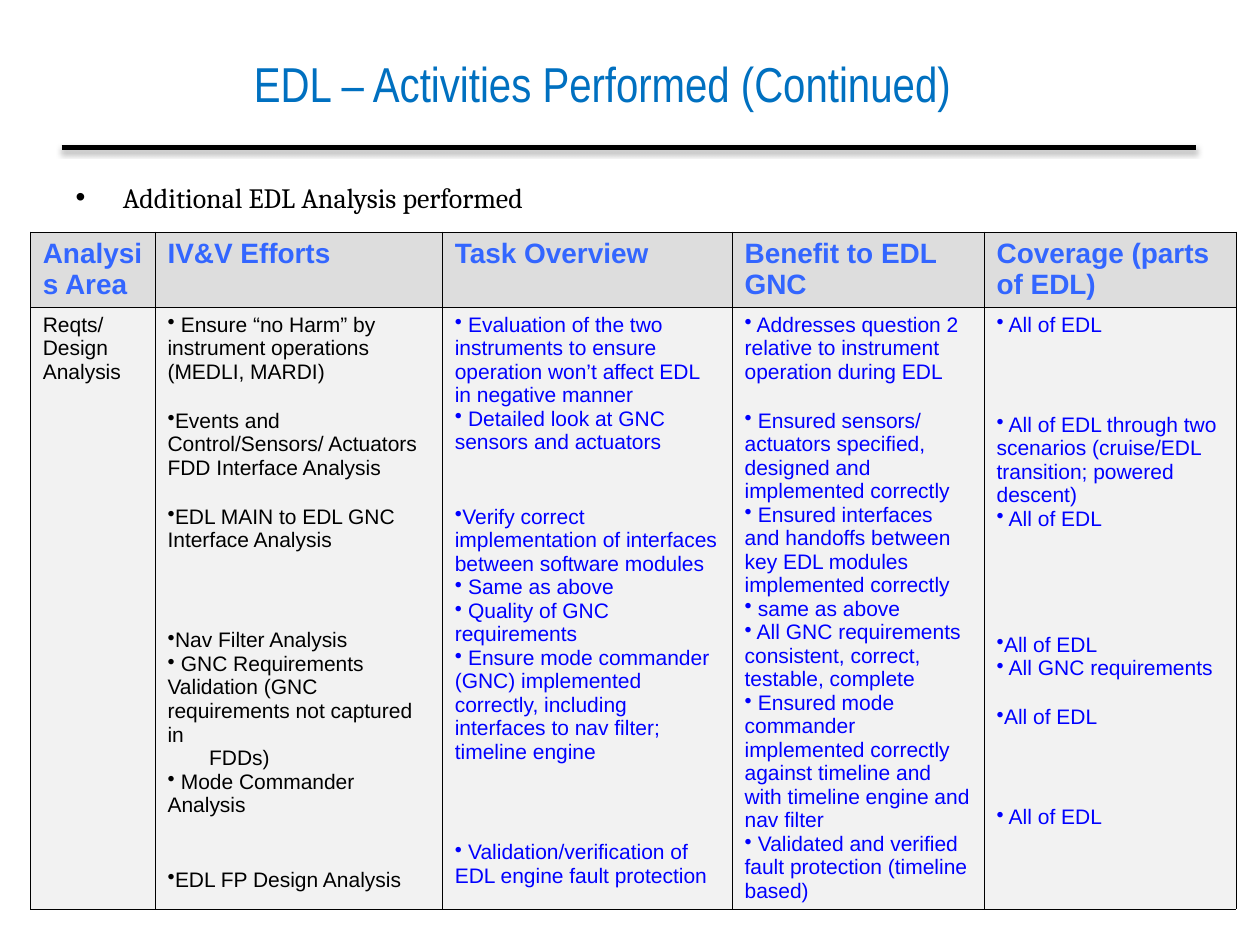
from dataclasses import dataclass
from lxml.etree import SubElement
from pptx import Presentation
from pptx.dml.color import RGBColor
from pptx.enum.shapes import MSO_CONNECTOR
from pptx.enum.text import MSO_ANCHOR, PP_ALIGN
from pptx.oxml import parse_xml
from pptx.oxml.ns import nsdecls, qn
from pptx.util import Inches, Pt


@dataclass(frozen=True)
class Theme:
    title: str = "0070C0"
    head: str = "3366FF"
    black: str = "000000"
    blue: str = "0000FF"
    shade: str = "DDDDDD"
    pale: str = "F2F2F2"
    big: int = 28
    mid: int = 16
    small: int = 12
    gap: float = 14.6


theme = Theme()


def write(text, para, size=theme.small, color=theme.black, face="Arial",
          bold=False, align=PP_ALIGN.LEFT, bullet=False, indent=0, gap=0):
    if bullet or indent:
        props = para._p.get_or_add_pPr()
        props.set("marL", str(Inches(indent)))
        props.set("indent", "0")
        if bullet:
            SubElement(props, qn("a:buChar")).set("char", "•")
    para.alignment = align
    para.space_before = Pt(gap)
    run = para.add_run()
    run.text = text
    run.font.size = Pt(size)
    run.font.name = face
    run.font.bold = bold
    run.font.color.rgb = RGBColor.from_string(color)


deck = Presentation()
deck.slide_width, deck.slide_height = Inches(10), Inches(7.5)
slide = deck.slides.add_slide(deck.slide_layouts[1])

title = slide.shapes.title
title.left, title.top = Inches(1.15), Inches(0.3)
title.width, title.height = Inches(7.26), Inches(0.72)
title.text_frame.vertical_anchor = MSO_ANCHOR.MIDDLE
write("EDL – Activities Performed (Continued)", title.text_frame.paragraphs[0],
      size=theme.big, color=theme.title, face="Arial Narrow", align=PP_ALIGN.CENTER)

body = slide.placeholders[1]
body.left, body.top = Inches(0.5), Inches(1.38)
body.width, body.height = Inches(9), Inches(5.32)
write("Additional EDL Analysis performed", body.text_frame.paragraphs[0],
      size=theme.mid, face="Cambria")

rule = slide.shapes.add_connector(
    MSO_CONNECTOR.STRAIGHT, Inches(0.49), Inches(1.17), Inches(9.49), Inches(1.17))
rule.line.width = Pt(3)
rule.line.color.rgb = RGBColor.from_string(theme.black)
rule._element.spPr.append(parse_xml(
    f'<a:effectLst {nsdecls("a")}><a:outerShdw blurRad="{Pt(3.1)}" dist="{Pt(1.8)}" '
    f'dir="5400000" rotWithShape="0"><a:srgbClr val="{theme.black}">'
    '<a:alpha val="35000"/></a:srgbClr></a:outerShdw></a:effectLst>'))

heads = ["Analysis Area", "IV&V Efforts", "Task Overview",
         "Benefit to EDL GNC", "Coverage (parts of EDL)"]
efforts = [
    (0, " Ensure “no Harm” by instrument operations (MEDLI, MARDI)"),
    (1, "Events and Control/Sensors/ Actuators FDD Interface Analysis"),
    (1, "EDL MAIN to EDL GNC Interface Analysis"),
    (3, "Nav Filter Analysis"),
    (0, " GNC Requirements Validation (GNC requirements not captured in"),
    (0, "FDDs)"),
    (0, " Mode Commander Analysis"),
    (2, "EDL FP Design Analysis"),
]
tasks = [
    (0, " Evaluation of the two instruments to ensure operation won’t affect EDL in negative manner"),
    (0, " Detailed look at GNC sensors and actuators"),
    (2, "Verify correct implementation of interfaces between software modules"),
    (0, " Same as above"),
    (0, " Quality of GNC requirements"),
    (0, " Ensure mode commander (GNC) implemented correctly, including interfaces to nav filter; timeline engine"),
    (3, " Validation/verification of EDL engine fault protection"),
]
gains = [
    (0, " Addresses question 2 relative to instrument operation during EDL"),
    (1, " Ensured sensors/ actuators specified, designed and implemented correctly"),
    (0, " Ensured interfaces and handoffs between key EDL modules implemented correctly"),
    (0, " same as above"),
    (0, " All GNC requirements consistent, correct, testable, complete"),
    (0, " Ensured mode commander implemented correctly against timeline and with timeline engine and nav filter"),
    (0, " Validated and verified fault protection (timeline based)"),
]
scope = [
    (0, " All of EDL"),
    (3, " All of EDL through two scenarios (cruise/EDL transition; powered descent)"),
    (0, " All of EDL"),
    (4, "All of EDL"),
    (0, " All GNC requirements"),
    (1, "All of EDL"),
    (3, " All of EDL"),
]
lists = [[(0, "Reqts/ Design Analysis")], efforts, tasks, gains, scope]

grid = slide.shapes.add_table(
    2, 5, Inches(0.24), Inches(1.84), Inches(9.57), Inches(5.37)).table
for col, width in zip(grid.columns, [0.99, 2.28, 2.3, 2, 2]):
    col.width = Inches(width)
for row, height in zip(grid.rows, [0.59, 4.78]):
    row.height = Inches(height)

for num, (head, items) in enumerate(zip(heads, lists)):
    top, low = grid.cell(0, num), grid.cell(1, num)
    for cell, fill in [(top, theme.shade), (low, theme.pale)]:
        for side in ("lnL", "lnR", "lnT", "lnB"):
            cell._tc.get_or_add_tcPr().append(parse_xml(
                f'<a:{side} {nsdecls("a")} w="{Pt(0.25)}"><a:solidFill>'
                f'<a:srgbClr val="{theme.black}"/></a:solidFill></a:{side}>'))
        cell.fill.solid()
        cell.fill.fore_color.rgb = RGBColor.from_string(fill)
    write(head, top.text_frame.paragraphs[0], size=theme.mid, color=theme.head, bold=True)
    for spot, (lines, text) in enumerate(items):
        frame = low.text_frame
        para = frame.add_paragraph() if spot else frame.paragraphs[0]
        inset = text == "FDDs)"
        write(text, para, color=theme.blue if num > 1 else theme.black,
              bullet=num > 0 and not inset, indent=0.33 if inset else 0,
              gap=lines * theme.gap)

deck.save("out.pptx")
